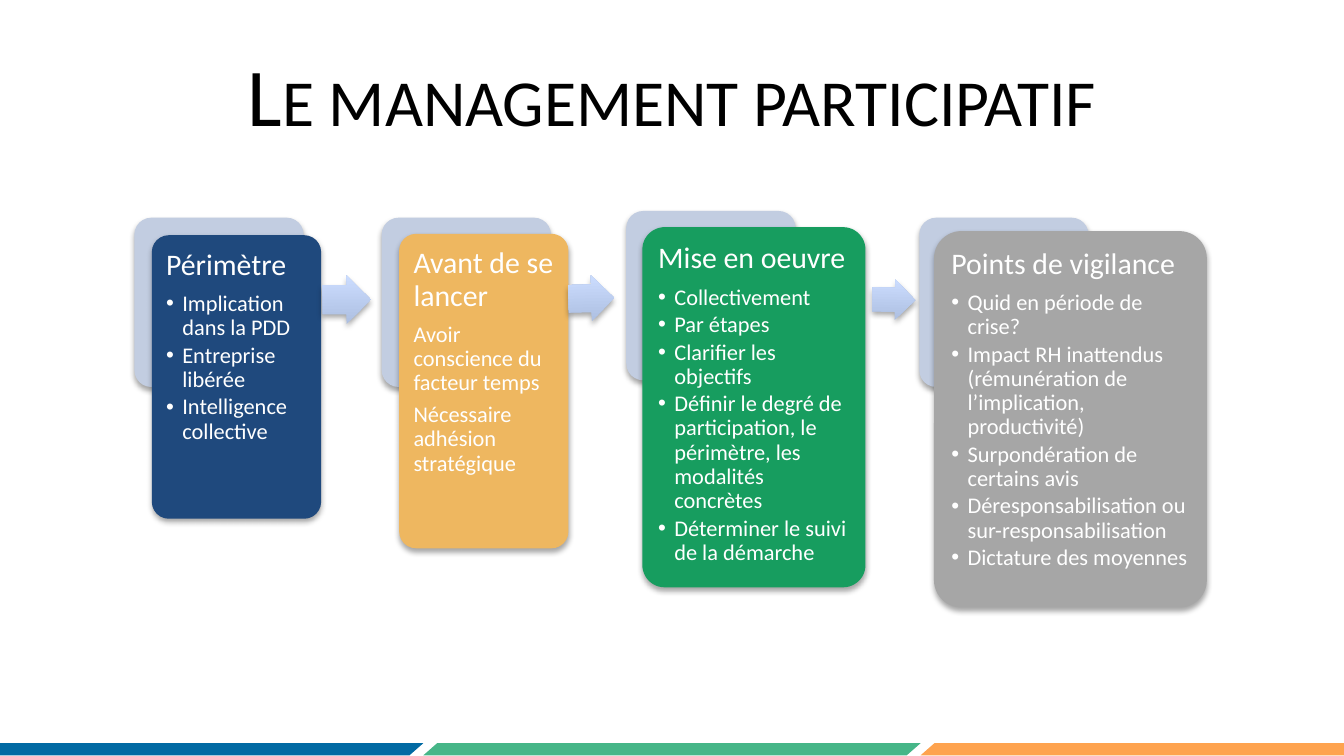
from dataclasses import dataclass

import pptx
import pptx.dml.color
import pptx.enum.shapes
import pptx.enum.text
import pptx.oxml.ns
import pptx.util
from lxml import etree

Inches = pptx.util.Inches
Pt = pptx.util.Pt
Shapes = pptx.enum.shapes.MSO_SHAPE
qn = pptx.oxml.ns.qn


@dataclass(frozen=True)
class Theme:
    font: str = "Calibri"
    bullet_font: str = "Arial"
    title_size: int = 44
    heading_size: int = 16
    body_size: int = 12
    title_color: str = "000000"
    card_text: str = "FFFFFF"
    back_card: str = "C2CDE1"
    arrow_colors: tuple = ("ADBFE1", "CCDDFF")
    footer_colors: tuple = ("016AA3", "46B688", "FEA34F")


def rgb(code):
    return pptx.dml.color.RGBColor.from_string(code)


class Slide:
    BACK_SIZE = 1.26
    CORNER = 0.1
    INSET = 0.07
    INDENT = 0.12

    def __init__(self, page, theme):
        self.page = page
        self.theme = theme

    def shape(self, kind, left, top, width, height, color=None, adjust=()):
        shape = self.page.shapes.add_shape(
            kind, Inches(left), Inches(top), Inches(width), Inches(height))
        shape.shadow.inherit = False
        shape.line.fill.background()
        for index, value in enumerate(adjust):
            shape.adjustments[index] = value
        if color:
            shape.fill.solid()
            shape.fill.fore_color.rgb = rgb(color)
        return shape

    def soft_shadow(self, shape):
        effects = shape._element.spPr.find(qn("a:effectLst"))
        shadow = etree.SubElement(
            effects, qn("a:outerShdw"), blurRad=str(Pt(3.1)),
            dist=str(Pt(1.8)), dir="5400000", rotWithShape="0")
        black = etree.SubElement(shadow, qn("a:srgbClr"), val="000000")
        etree.SubElement(black, qn("a:alpha"), val="35000")

    def text_box(self, left, top, width, height):
        box = self.page.shapes.add_textbox(
            Inches(left), Inches(top), Inches(width), Inches(height))
        box.text_frame.word_wrap = True
        return box.text_frame

    def style(self, para, size, color):
        para.font.name = self.theme.font
        para.font.size = Pt(size)
        para.font.color.rgb = rgb(color)

    def title(self, text):
        frame = self.text_box(0.5, 0.23, 9, 0.94)
        frame.vertical_anchor = pptx.enum.text.MSO_ANCHOR.MIDDLE
        para = frame.paragraphs[0]
        para.alignment = pptx.enum.text.PP_ALIGN.CENTER
        span = para.add_run()
        span.text = text
        span._r.get_or_add_rPr().set("cap", "small")
        self.style(para, self.theme.title_size, self.theme.title_color)

    def bullet(self, para):
        para.level = 1
        props = para._p.get_or_add_pPr()
        props.set("marL", str(Inches(self.INDENT)))
        props.set("indent", str(-Inches(self.INDENT)))
        defaults = props.find(qn("a:defRPr"))
        for tag, name, value in (("a:buFont", "typeface", self.theme.bullet_font),
                                 ("a:buChar", "char", "•")):
            mark = etree.SubElement(props, qn(tag))
            mark.set(name, value)
            defaults.addprevious(mark)

    def card(self, back, front, color, heading, items, bulleted=True):
        """Draw a front card with its text over a pale square."""
        square = (*back, self.BACK_SIZE, self.BACK_SIZE)
        for place, fill in ((square, self.theme.back_card), (front, color)):
            self.soft_shadow(self.shape(
                Shapes.ROUNDED_RECTANGLE, *place, fill, (self.CORNER,)))

        left, top, width, height = front
        edge = 0.29 * self.CORNER * width  # clears the rounded corners
        frame = self.text_box(left + edge, top + edge,
                              width - 2 * edge, height - 2 * edge)
        frame.margin_left = frame.margin_right = Inches(self.INSET)
        frame.margin_top = frame.margin_bottom = Inches(self.INSET)
        for index, text in enumerate([heading, *items]):
            para = frame.add_paragraph() if index else frame.paragraphs[0]
            para.text = text
            size = self.theme.body_size if index else self.theme.heading_size
            is_bullet = bulleted and index > 0
            para.line_spacing = 0.9
            para.space_after = Pt(size * (0.15 if is_bullet else 0.35))
            self.style(para, size, self.theme.card_text)
            if is_bullet:
                self.bullet(para)

    def arrow(self, left, top, width, height, rotation):
        arrow = self.shape(Shapes.RIGHT_ARROW, left, top, width, height,
                           adjust=(0.6, 0.5))
        arrow.rotation = rotation
        arrow.fill.gradient()
        arrow.fill.gradient_angle = 90
        for stop, color in zip(arrow.fill.gradient_stops,
                               self.theme.arrow_colors):
            stop.color.rgb = rgb(color)
        self.soft_shadow(arrow)

    def footer(self):
        width = 3.7
        for index, color in enumerate(self.theme.footer_colors):
            self.shape(Shapes.PARALLELOGRAM, -0.55 + index * width, 5.53,
                       width, 0.09, color, (1.14,))


CARDS = [
    dict(back=(1, 1.62), front=(1.13, 1.75, 1.26, 2.11), color="1F497D",
         heading="Périmètre",
         items=["Implication dans la PDD", "Entreprise libérée",
                "Intelligence collective"]),
    dict(back=(2.84, 1.62), front=(2.97, 1.74, 1.26, 2.34), color="EEB760",
         heading="Avant de se lancer", bulleted=False,
         items=["Avoir conscience du facteur temps",
                "Nécessaire adhésion stratégique"]),
    dict(back=(4.66, 1.57), front=(4.78, 1.69, 1.66, 2.68), color="179D5F",
         heading="Mise en oeuvre",
         items=["Collectivement", "Par étapes", "Clarifier les objectifs",
                "Définir le degré de participation, le périmètre, "
                "les modalités concrètes",
                "Déterminer le suivi de la démarche"]),
    dict(back=(6.84, 1.62), front=(6.95, 1.72, 2.03, 2.8), color="A6A6A6",
         heading="Points de vigilance",
         items=["Quid en période de crise?",
                "Impact RH inattendus (rémunération de l’implication, "
                "productivité)",
                "Surpondération de certains avis",
                "Déresponsabilisation ou sur-responsabilisation",
                "Dictature des moyennes"]),
]
ARROWS = [
    (2.4, 2.05, 0.36, 0.36, 359.9),
    (4.23, 2.05, 0.34, 0.34, 358.7),
    (6.49, 2.08, 0.32, 0.3, 1.2),
]


def main():
    deck = pptx.Presentation()
    deck.slide_width = Inches(10)
    deck.slide_height = deck.slide_width * 9 // 16
    slide = Slide(deck.slides.add_slide(deck.slide_layouts[6]), Theme())
    slide.footer()
    for index, card in enumerate(CARDS):
        slide.card(**card)
        if index < len(ARROWS):
            slide.arrow(*ARROWS[index])
    slide.title("Le management participatif")
    deck.save("out.pptx")


if __name__ == "__main__":
    main()
